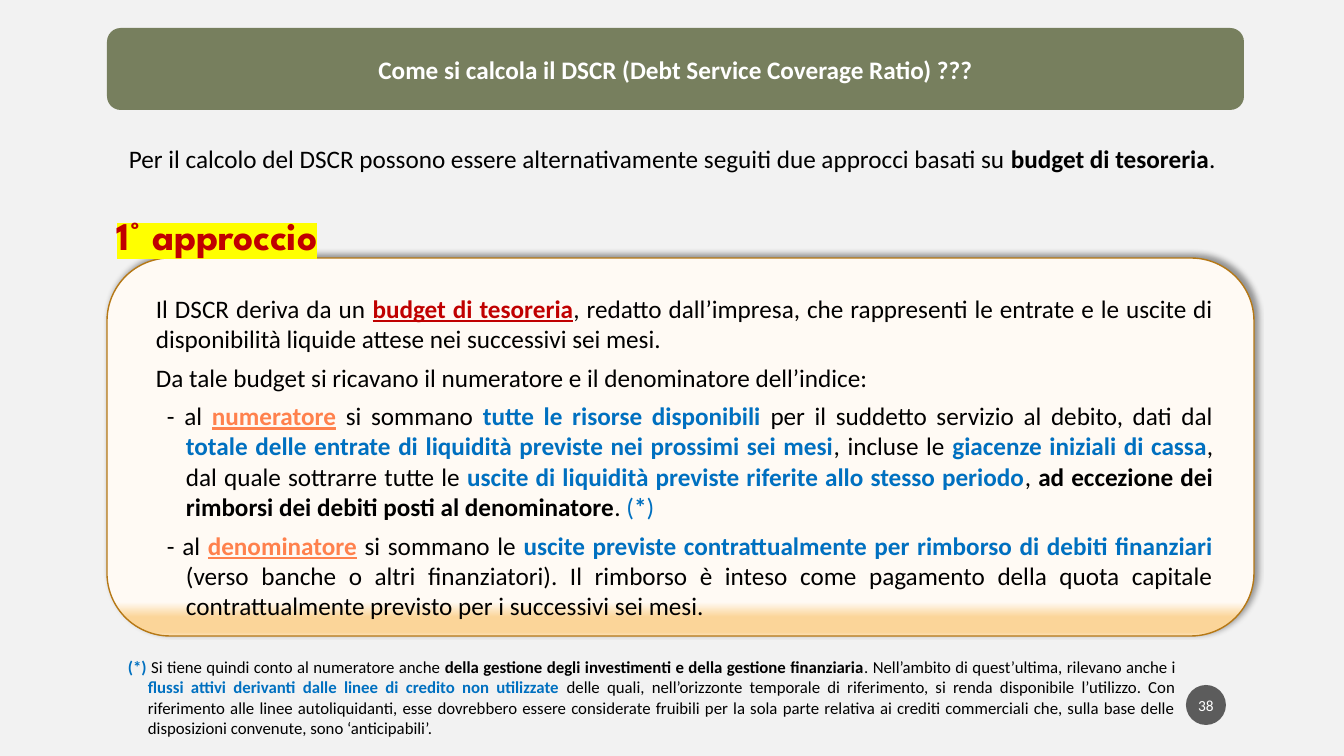
from lxml.etree import SubElement as Sub
from pptx import Presentation
from pptx.dml.color import RGBColor as RGB
from pptx.enum.shapes import MSO_SHAPE as Shape
from pptx.enum.text import MSO_ANCHOR as Anchor, PP_ALIGN as Align
from pptx.oxml.ns import qn
from pptx.util import Pt

PX = 914400 / 100.8
COLS = {
    "back": "F2F2F2", "olive": "777F5E", "badge": "1D1D1D", "edge": "B67815",
    "cream": "FFFAF4", "gold": "FBD599", "sand": "FCE3BB", "mark": "FFFF00",
    "white": "FFFFFF", "black": "000000", "red": "C00000",
    "coral": "FF814D", "blue": "0070C0",
}
# Run styles: colour, bold, underline
STYLES = {
    "plain": ("black", False, False), "bold": ("black", True, False),
    "blue": ("blue", True, False), "thin": ("blue", False, False),
    "red": ("red", True, True), "coral": ("coral", True, True),
    "head": ("red", True, False), "title": ("white", True, False),
    "num": ("white", False, False),
}


def write(para, size, runs, align=Align.JUSTIFY, left=0, first=0, font="Calibri"):
    para.alignment = align
    props = para._p.get_or_add_pPr()
    props.set("marL", str(round(left * PX)))
    props.set("indent", str(round(first * PX)))
    for text, style in runs:
        run = para.add_run()
        run.text = text
        col, bold, line = STYLES[style]
        run.font.size, run.font.name = Pt(size), font
        run.font.bold, run.font.underline = bold, line
        run.font.color.rgb = RGB.from_string(COLS[col])


def place(kind, *box):
    box = [round(n * PX) for n in box]
    if kind is None:
        item = slide.shapes.add_textbox(*box)
    else:
        item = slide.shapes.add_shape(kind, *box)
        item.shadow.inherit = False
        item.line.fill.background()
        item.text_frame.vertical_anchor = Anchor.MIDDLE
    item.text_frame.word_wrap = True
    return item


deck = Presentation()
deck.slide_width, deck.slide_height = round(1344 * PX), round(756 * PX)
slide = deck.slides.add_slide(deck.slide_layouts[6])
slide.background.fill.solid()
slide.background.fill.fore_color.rgb = RGB.from_string(COLS["back"])

# Cream panel with a golden foot and a soft shadow
panel = place(Shape.ROUNDED_RECTANGLE, 107, 258, 1147, 378)
panel.fill.gradient()
panel.fill.gradient_angle = 270
stops = panel._element.spPr.find(".//" + qn("a:gsLst"))
for stop in list(stops):
    stops.remove(stop)
for pos, col in ((91, "cream"), (95, "gold"), (99, "gold"), (100, "sand")):
    stop = Sub(stops, qn("a:gs"), pos=str(pos * 1000))
    Sub(stop, qn("a:srgbClr"), val=COLS[col])
panel.line.color.rgb = RGB.from_string(COLS["edge"])
panel.line.width = Pt(1)
glow = Sub(panel._element.spPr.find(qn("a:effectLst")), qn("a:outerShdw"),
           blurRad=str(Pt(4)), dist=str(Pt(3)), dir=str(315 * 60000),
           algn="bl", rotWithShape="0")
shade = Sub(glow, qn("a:srgbClr"), val=COLS["black"])
Sub(shade, qn("a:alpha"), val="40000")

# Page number badge
badge = place(Shape.OVAL, 1186, 685, 40, 40)
badge.fill.solid()
badge.fill.fore_color.rgb = RGB.from_string(COLS["badge"])
Sub(badge._element.spPr.find(".//" + qn("a:srgbClr")), qn("a:alpha"), val="70000")
badge.text_frame.margin_left = badge.text_frame.margin_right = round(2 * PX)
write(badge.text_frame.paragraphs[0], 11, [("38", "num")], Align.CENTER)

# Title bar
title = place(Shape.ROUNDED_RECTANGLE, 107, 28, 1137, 82)
title.fill.solid()
title.fill.fore_color.rgb = RGB.from_string(COLS["olive"])
write(title.text_frame.paragraphs[0], 18,
      [("Come si calcola il DSCR (Debt Service Coverage Ratio) ???", "title")], Align.CENTER)

# Opening line
intro = place(None, 119, 138, 1126, 40)
write(intro.text_frame.paragraphs[0], 18, [
    ("Per il calcolo del DSCR possono essere alternativamente seguiti due approcci basati su ", "plain"),
    ("budget di tesoreria", "bold"), (".", "plain")], Align.LEFT)

# Marked heading and body
body = place(None, 107, 206, 1116, 409).text_frame
head = body.paragraphs[0]
write(head, 28, [("1° approccio", "head")], Align.LEFT, font="League Spartan")
mark = head.runs[0].font._element.makeelement(qn("a:highlight"))
Sub(mark, qn("a:srgbClr"), val=COLS["mark"])
head.runs[0].font._element.find(qn("a:solidFill")).addnext(mark)

# Each entry: space before, left indent, first-line indent, runs
PARAS = [
    (25, 39, 0, [
        ("Il DSCR deriva da un ", "plain"), ("budget di tesoreria", "red"),
        (", redatto dall’impresa, che rappresenti le entrate e le uscite di disponibilità "
         "liquide attese nei successivi sei mesi. ", "plain")]),
    (6, 39, 0, [
        ("Da tale budget si ricavano il numeratore e il denominatore dell’indice: ", "plain")]),
    (6, 69, -19, [
        ("- al ", "plain"), ("numeratore", "coral"), (" si sommano ", "plain"),
        ("tutte le risorse disponibili ", "blue"),
        ("per il suddetto servizio al debito, dati dal ", "plain"),
        ("totale delle entrate di liquidità previste nei prossimi sei mesi", "blue"),
        (", incluse le ", "plain"), ("giacenze iniziali di cassa", "blue"),
        (", dal quale sottrarre tutte le ", "plain"),
        ("uscite di liquidità previste riferite allo stesso periodo", "blue"), (", ", "plain"),
        ("ad eccezione dei rimborsi dei debiti posti al denominatore", "bold"), (".", "plain"),
        (" (", "thin"), ("*", "blue"), (") ", "thin")]),
    (6, 69, -19, [
        ("- al ", "plain"), ("denominatore", "coral"), (" si sommano le ", "plain"),
        ("uscite previste contrattualmente per rimborso di debiti finanziari ", "blue"),
        ("(verso banche o altri finanziatori). Il rimborso è inteso come pagamento della quota "
         "capitale contrattualmente previsto per i successivi sei mesi. ", "plain")]),
]
for gap, left, first, runs in PARAS:
    para = body.add_paragraph()
    write(para, 18, runs, left=left, first=first)
    para.space_before = Pt(gap)

# Footnote
note = place(None, 118, 652, 1068, 92)
write(note.text_frame.paragraphs[0], 12, [
    ("(*) ", "blue"), ("Si tiene quindi conto al numeratore anche ", "plain"),
    ("della gestione degli investimenti e della gestione finanziaria", "bold"),
    (". Nell’ambito di quest’ultima, rilevano anche i ", "plain"),
    ("flussi attivi derivanti dalle linee di credito non utilizzate", "blue"),
    (" delle quali, nell’orizzonte temporale di riferimento, si renda disponibile l’utilizzo. "
     "Con riferimento alle linee autoliquidanti, esse dovrebbero essere considerate fruibili "
     "per la sola parte relativa ai crediti commerciali che, sulla base delle disposizioni "
     "convenute, sono ‘anticipabili’. ", "plain")], left=20, first=-20)

deck.save("out.pptx")
